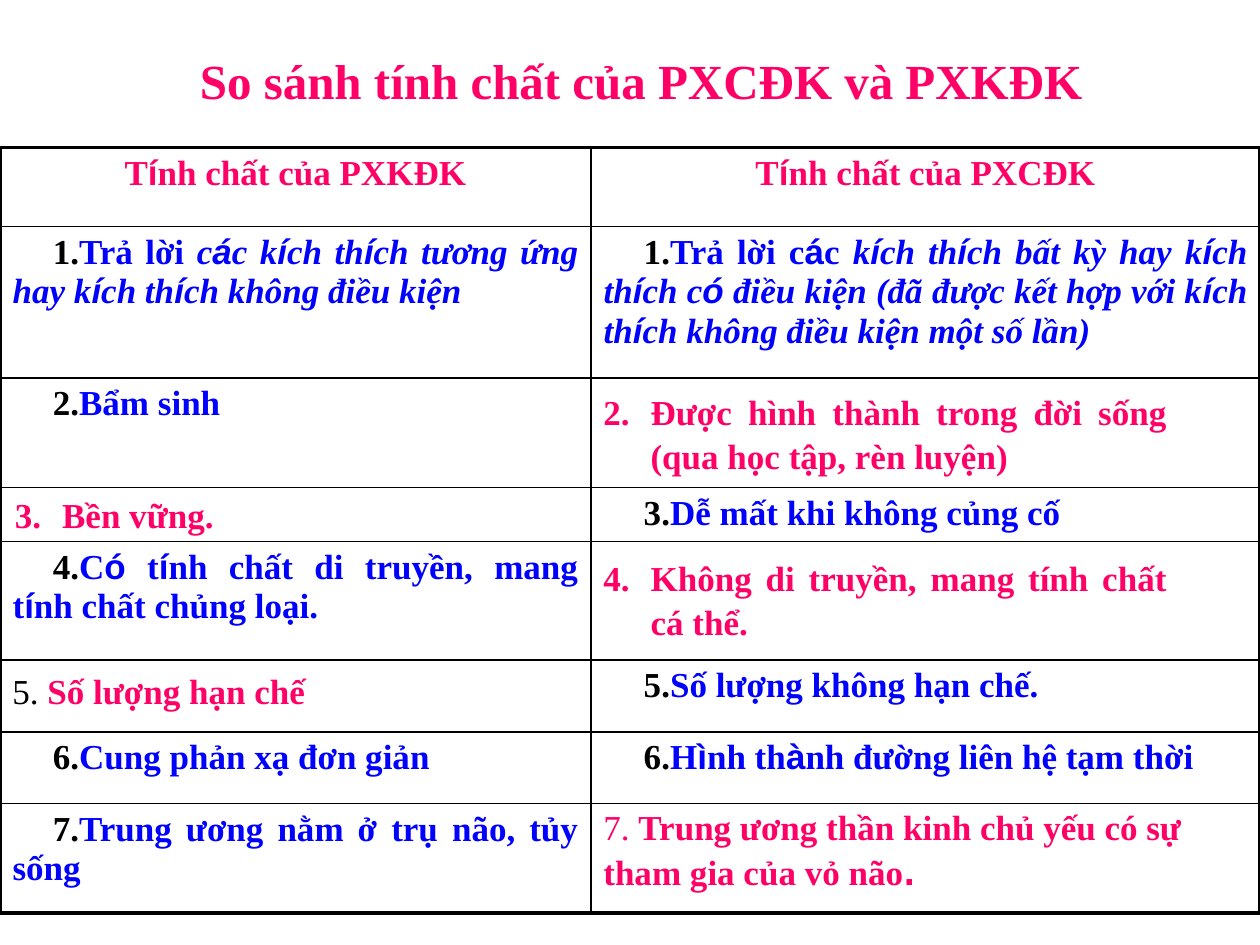
from itertools import groupby

from lxml import etree
from pptx import Presentation
from pptx.dml.color import RGBColor
from pptx.enum.text import MSO_ANCHOR, PP_ALIGN
from pptx.oxml.ns import qn
from pptx.util import Pt

LEFT, CENTER, JUSTIFY = PP_ALIGN.LEFT, PP_ALIGN.CENTER, PP_ALIGN.JUSTIFY
TOP = MSO_ANCHOR.TOP
PINK = RGBColor(0xFF, 0x00, 0x66)
BLUE = RGBColor(0x00, 0x00, 0xFF)
BLACK = RGBColor(0x00, 0x00, 0x00)
SERIF, SANS, SYMBOL = "Times New Roman", "Arial", "DejaVu Sans"
SANS_LETTERS = "íáóìà"  # set in the sans face inside the table
COLUMN_WIDTHS = [337.7, 382.3]
ROW_HEIGHTS = [45.4, 86.4, 62.6, 31, 67.7, 41, 41, 62.6]
TABLE_TOP = 84.2
BOX_LINE_SPACING = 1.05


def add_run(paragraph, text, color, size=20, font=SERIF, bold=True, italic=False):
    run = paragraph.add_run()
    run.text = text
    run.font.name = font
    run.font.size = Pt(size)
    run.font.bold = bold
    run.font.italic = italic
    run.font.color.rgb = color


def number_paragraph(paragraph, start, margin, indent, color):
    """Give the paragraph an automatic number that starts at a given value."""
    properties = paragraph._p.get_or_add_pPr()
    properties.set("marL", str(Pt(margin)))
    properties.set("indent", str(Pt(indent)))
    bullet_color = etree.SubElement(properties, qn("a:buClr"))
    etree.SubElement(bullet_color, qn("a:srgbClr"), val=str(color))
    etree.SubElement(properties, qn("a:buAutoNum"), type="arabicPeriod", startAt=str(start))


presentation = Presentation()
presentation.slide_width, presentation.slide_height = Pt(720), Pt(540)
slide = presentation.slides.add_slide(presentation.slide_layouts[5])

# Title
title = slide.shapes.title
title.left, title.top, title.width, title.height = Pt(107), Pt(23.8), Pt(528), Pt(41)
title.text_frame.vertical_anchor = TOP
paragraph = title.text_frame.paragraphs[0]
paragraph.alignment = LEFT
paragraph.line_spacing = BOX_LINE_SPACING
add_run(paragraph, "So sánh tính chất của PXCĐK và PXKĐK", PINK, size=28)

# Each cell holds its upright text and the italic text that follows;
# None marks a cell whose answer lies in a text box on top.
rows = [
    [("Tính chất của PXKĐK", ""), ("Tính chất của PXCĐK", "")],
    [("Trả lời ", "các kích thích tương ứng hay kích thích không điều kiện"),
     ("Trả lời các ", "kích thích bất kỳ hay kích thích có điều kiện "
      "(đã được kết hợp với kích thích không điều kiện một số lần)")],
    [("Bẩm sinh", ""), None],
    [None, ("Dễ mất khi không củng cố", "")],
    [("Có tính chất di truyền, mang tính chất chủng loại.", ""), None],
    [None, ("Số lượng không hạn chế.", "")],
    [("Cung phản xạ đơn giản", ""), ("Hình thành đường liên hệ tạm thời", "")],
    [("Trung ương nằm ở trụ não, tủy sống", ""), None],
]
table_frame = slide.shapes.add_table(
    len(rows), 2, 0, Pt(TABLE_TOP), Pt(sum(COLUMN_WIDTHS)), Pt(sum(ROW_HEIGHTS)))
table = table_frame.table
table.first_row = False
table.horz_banding = False
for column, width in zip(table.columns, COLUMN_WIDTHS):
    column.width = Pt(width)

for row_index, row in enumerate(rows):
    table.rows[row_index].height = Pt(ROW_HEIGHTS[row_index])
    for column_index, content in enumerate(row):
        cell = table.cell(row_index, column_index)
        cell.fill.background()
        on_outer_edge = {
            "a:lnL": column_index == 0,
            "a:lnR": column_index == 1,
            "a:lnT": row_index == 0,
            "a:lnB": row_index == len(rows) - 1,
        }
        cell_properties = cell._tc.get_or_add_tcPr()
        for position, (side, outer) in enumerate(on_outer_edge.items()):
            border = etree.Element(qn(side), w=str(Pt(2.25 if outer else 1)))
            border_fill = etree.SubElement(border, qn("a:solidFill"))
            etree.SubElement(border_fill, qn("a:srgbClr"), val=str(BLACK))
            cell_properties.insert(position, border)
        if content is None:
            continue

        paragraph = cell.text_frame.paragraphs[0]
        if row_index == 0:
            paragraph.alignment = CENTER
            color = PINK
        else:
            paragraph.alignment = JUSTIFY
            color = BLUE
            number_paragraph(paragraph, row_index, 0, 23, BLACK)
        for italic, text in enumerate(content):
            for sans, letters in groupby(text, lambda letter: letter in SANS_LETTERS):
                add_run(paragraph, "".join(letters), color,
                        font=SANS if sans else SERIF, italic=bool(italic))

# Answers over the empty cells: place, automatic number or None, runs
right_column = COLUMN_WIDTHS[0]
answers = [
    (right_column, 218.2, 336.3, 55.4, 2,
     [("Được hình thành trong đời sống (qua học tập, rèn luyện)", PINK, 20, SERIF, True)]),
    (1.4, 277.2, 234, 31, 3, [("Bền vững.", PINK, 20, SERIF, True)]),
    (right_column, 313.2, 336.3, 55.4, 4,
     [("Không di truyền, mang tính chất cá thể.", PINK, 20, SERIF, True)]),
    (0, 378, 234, 31, None,
     [("5. ", BLACK, 20, SERIF, False), ("Số lượng hạn chế", PINK, 20, SERIF, True)]),
    (right_column, 455.8, 354.2, 55.4, None,
     [("7. ", PINK, 20, SERIF, False),
      ("Trung ương thần kinh chủ yếu có sự tham gia của vỏ não", PINK, 20, SERIF, True),
      (".", PINK, 18, SYMBOL, True)]),
]
for left, top, width, height, number, runs in answers:
    answer_box = slide.shapes.add_textbox(Pt(left), Pt(top), Pt(width), Pt(height))
    answer_box.text_frame.word_wrap = True
    paragraph = answer_box.text_frame.paragraphs[0]
    paragraph.line_spacing = BOX_LINE_SPACING
    if number:
        paragraph.alignment = JUSTIFY
        number_paragraph(paragraph, number, 27, -27, PINK)
    for run in runs:
        add_run(paragraph, *run)

presentation.save("out.pptx")
